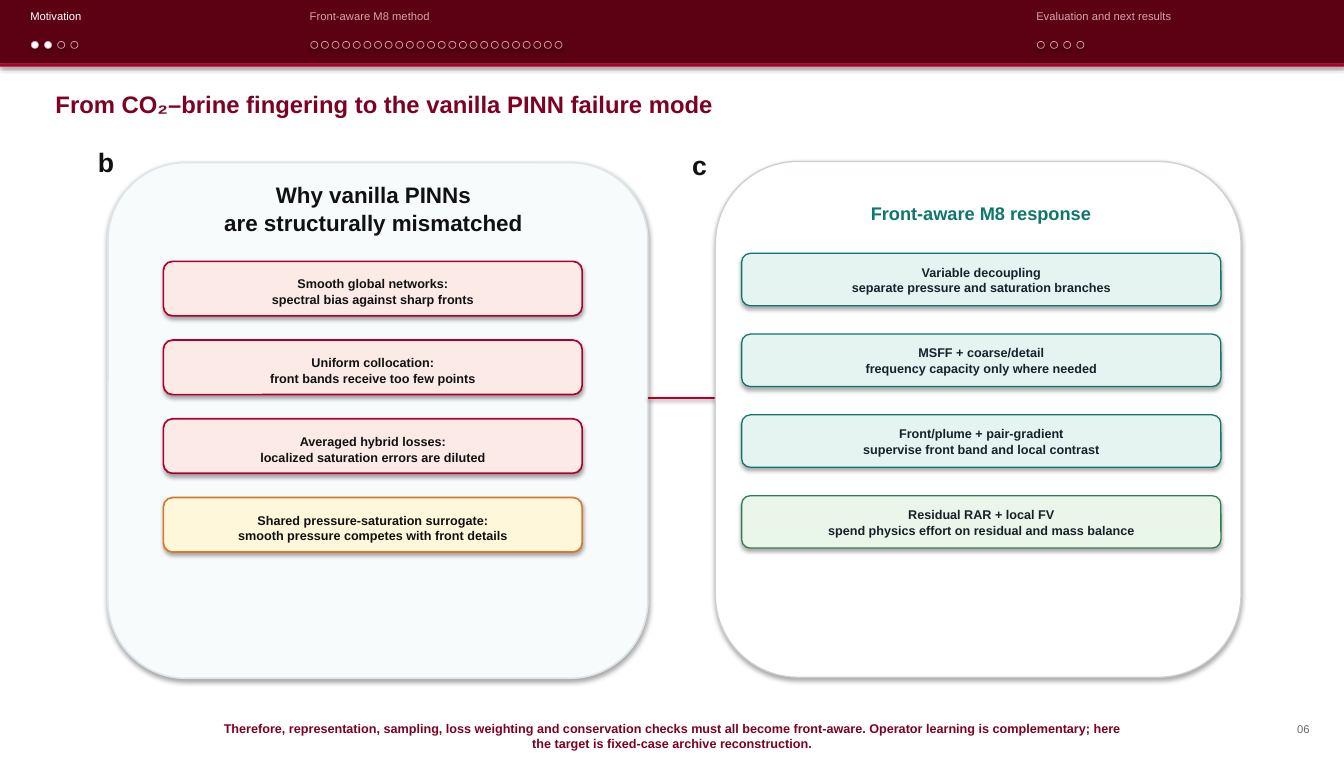
from pptx import Presentation
from pptx import util as u
from pptx.dml import color
from pptx.enum import shapes, text

ALIGN = {"l": text.PP_ALIGN.LEFT, "c": text.PP_ALIGN.CENTER, "r": text.PP_ALIGN.RIGHT}
MAROON, CRIMSON, WINE, ROSE = "5C0014", "B0002A", "7E0023", "D6A3AF"
WHITE, INK, SLATE, TEAL = "FFFFFF", "111111", "17212B", "0F766E"
PINK, MINT = "FCEAE7", "E5F4F1"


def rgb(value):
    return color.RGBColor.from_string(value)


class Deck:
    font = "Arial"
    spacing = 1.05

    def __init__(self):
        self.prs = Presentation()
        self.prs.slide_width = u.Inches(13.32)
        self.prs.slide_height = u.Inches(7.5)
        self.s = self.prs.slides.add_slide(self.prs.slide_layouts[5])

    def x(self, share):
        return round(self.prs.slide_width * share / 100)

    def y(self, share):
        return round(self.prs.slide_height * share / 100)

    def box(self, x, y, w, h):
        return self.x(x), self.y(y), self.x(w), self.y(h)

    def put_text(self, sp, lines, size, ink, bold=True, align="c", pad=(0.72,) * 4):
        tf = sp.text_frame
        tf.margin_left, tf.margin_top, tf.margin_right, tf.margin_bottom = map(u.Pt, pad)
        for i, line in enumerate(lines):
            p = tf.add_paragraph() if i else tf.paragraphs[0]
            p.alignment = ALIGN[align]
            p.line_spacing = self.spacing
            r = p.add_run()
            r.text = line
            r.font.name = self.font
            r.font.size = u.Pt(size)
            r.font.bold = bold
            r.font.color.rgb = rgb(ink)

    def grow(self, sp, wrap):
        tf = sp.text_frame
        tf.word_wrap = wrap
        tf.vertical_anchor = text.MSO_ANCHOR.TOP
        tf.auto_size = text.MSO_AUTO_SIZE.SHAPE_TO_FIT_TEXT

    def title(self, line, *at):
        sp = self.s.shapes.title
        sp.left, sp.top, sp.width, sp.height = self.box(*at)
        self.put_text(sp, [line], 17, WINE, align="l", pad=(4.32, 2.16, 4.32, 2.16))
        self.grow(sp, True)

    def label(self, lines, at, size, ink, wrap=False, **style):
        sp = self.s.shapes.add_textbox(*self.box(*at))
        self.put_text(sp, lines, size, ink, **style)
        self.grow(sp, wrap)

    def shape(self, kind, at, fill, line=None, weight=1):
        sp = self.s.shapes.add_shape(kind, *self.box(*at))
        sp.fill.solid()
        sp.fill.fore_color.rgb = rgb(fill)
        if line:
            sp.line.color.rgb = rgb(line)
            sp.line.width = u.Pt(weight)
        else:
            sp.line.fill.background()
        return sp

    def bar(self, at, fill):
        self.shape(shapes.MSO_SHAPE.RECTANGLE, at, fill)

    def panel(self, at, fill, line, weight, corner):
        sp = self.shape(shapes.MSO_SHAPE.ROUNDED_RECTANGLE, at, fill, line, weight)
        sp.adjustments[0] = corner
        return sp

    def cards(self, at, pitch, weight, ink, pad, rows):
        x, y, w, h = at
        for i, (fill, line, *lines) in enumerate(rows):
            sp = self.panel((x, y + i * pitch, w, h), fill, line, weight, 0.167)
            sp.text_frame.word_wrap = True
            sp.text_frame.vertical_anchor = text.MSO_ANCHOR.MIDDLE
            self.put_text(sp, lines, 9, ink, pad=pad)

    def section(self, name, x, w, pitch, count, done, ink):
        self.label([name], (x, 1.07, w, 1.87), 8, ink, bold=False, align="l")
        for i in range(count):
            self.shape(shapes.MSO_SHAPE.OVAL, (x + 0.15 + i * pitch, 5.47, 0.53, 0.93),
                       WHITE if i < done else MAROON, ROSE, 0.5)

    def link(self, x1, x2, y, line, weight):
        c = self.s.shapes.add_connector(shapes.MSO_CONNECTOR.STRAIGHT,
                                        self.x(x1), self.y(y), self.x(x2), self.y(y))
        c.line.color.rgb = rgb(line)
        c.line.width = u.Pt(weight)


def main():
    d = Deck()
    d.bar((0, 0, 100, 8.4), MAROON)
    d.bar((0, 8.4, 100, 0.4), CRIMSON)
    d.section("Motivation", 2.18, 4.05, 0.98, 4, 2, WHITE)
    d.section("Front-aware M8 method", 22.97, 9.16, 0.79, 24, 0, ROSE)
    d.section("Evaluation and next results", 77.03, 10.29, 0.98, 4, 0, ROSE)
    d.title("From CO₂–brine fingering to the vanilla PINN failure mode", 3.68, 11.2, 51.2, 4.27)

    d.label(["b"], (7.21, 18.93, 1.5, 4.27), 19, INK, align="l")
    d.panel((8.03, 21.47, 40.17, 68.13), "F8FBFC", "DDE6EA", 1.2, 0.151)
    d.label(["Why vanilla PINNs", "are structurally mismatched"],
            (16.52, 23.6, 22.52, 6.93), 16, INK)
    d.cards((12.16, 34.53, 31.16, 7.2), 10.4, 1.2, INK, (3, 4, 3, 0), [
        (PINK, CRIMSON, "Smooth global networks:", "spectral bias against sharp fronts"),
        (PINK, CRIMSON, "Uniform collocation:", "front bands receive too few points"),
        (PINK, CRIMSON, "Averaged hybrid losses:", "localized saturation errors are diluted"),
        ("FFF7D9", "D9782D", "Shared pressure-saturation surrogate:",
         "smooth pressure competes with front details"),
    ])

    d.label(["06"], (96.32, 95.2, 1.2, 1.87), 8, "666666", bold=False, align="r")
    d.label(["Therefore, representation, sampling, loss weighting and conservation checks "
             "must all become front-aware. Operator learning is complementary; here the "
             "target is fixed-case archive reconstruction."],
            (15.47, 94.67, 69.07, 3.2), 9, WINE, wrap=True, pad=(4.32, 2.16, 4.32, 2.16))

    d.link(48.2, 53.6, 52.53, CRIMSON, 1.6)
    d.panel((53.23, 21.33, 39.11, 68.13), WHITE, "C9D1D6", 0.9, 0.16)
    d.label(["Front-aware M8 response"], (64.64, 26.4, 16.67, 2.93), 13, TEAL)
    d.cards((55.18, 33.47, 35.66, 6.93), 10.67, 0.9, SLATE, (3, 3, 3, 3), [
        (MINT, TEAL, "Variable decoupling", "separate pressure and saturation branches"),
        (MINT, TEAL, "MSFF + coarse/detail", "frequency capacity only where needed"),
        (MINT, TEAL, "Front/plume + pair-gradient", "supervise front band and local contrast"),
        ("EAF6EA", "2E7D55", "Residual RAR + local FV",
         "spend physics effort on residual and mass balance"),
    ])
    d.label(["c"], (51.43, 19.33, 1.35, 4.27), 19, INK, align="l")
    d.prs.save("out.pptx")


if __name__ == "__main__":
    main()
